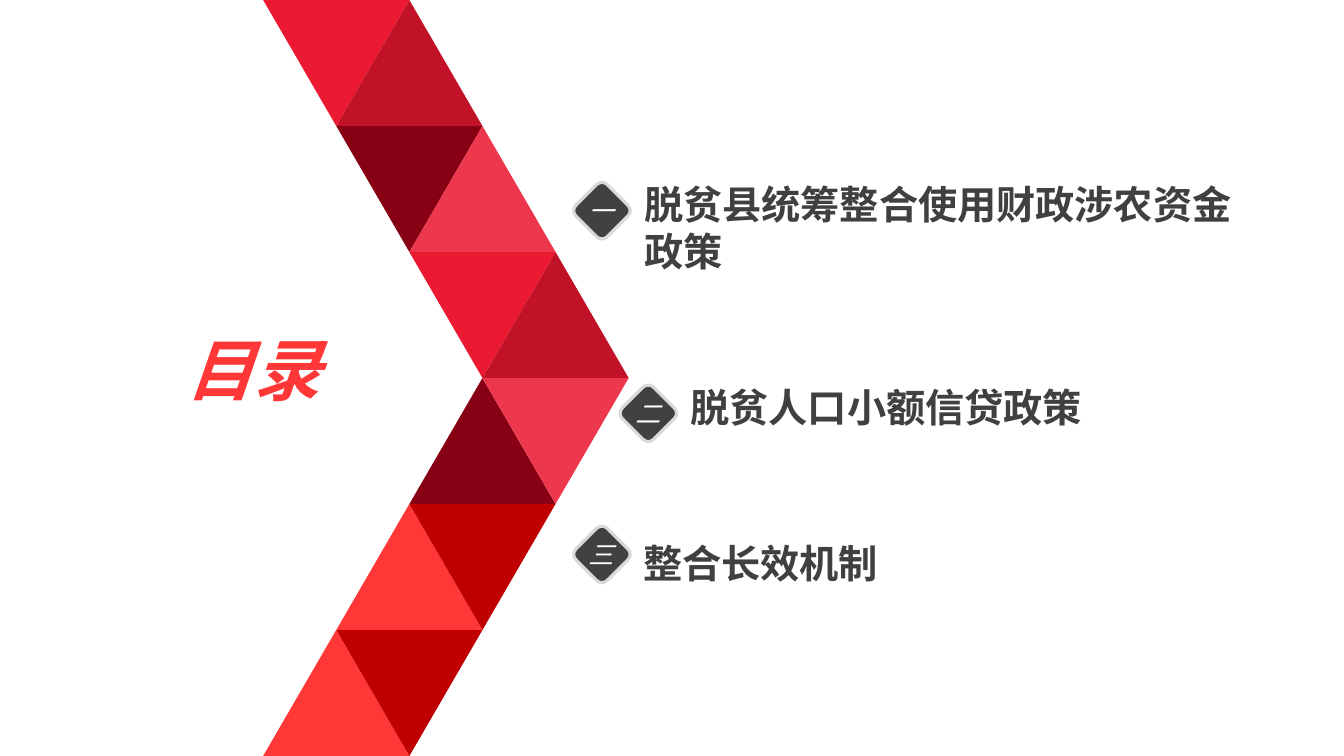
from pptx import Presentation
from pptx.dml.color import RGBColor as RGB
from pptx.enum.shapes import MSO_SHAPE as SHAPE
from pptx.enum.text import MSO_AUTO_SIZE as FIT, PP_ALIGN as ALIGN
from pptx.oxml.ns import qn
from pptx.util import Inches, Pt
from lxml.etree import SubElement

ROSE = RGB(0xED, 0x37, 0x4D)
RED = RGB(0xEB, 0x19, 0x32)
RUBY = RGB(0xC2, 0x12, 0x27)
WINE = RGB(0x88, 0x00, 0x14)
BRICK = RGB(0xC0, 0x00, 0x00)
CORAL = RGB(0xFF, 0x37, 0x37)
DARK = RGB(0x41, 0x41, 0x41)
INK = RGB(0x40, 0x40, 0x40)
GREY = RGB(0xD9, 0xD9, 0xD9)
WHITE = RGB(0xFF, 0xFF, 0xFF)


class Deck:
    head = "League Spartan"
    body = "Noto Sans CJK SC"

    def __init__(self):
        self.prs = Presentation()
        self.prs.slide_width = Inches(13.33)
        self.prs.slide_height = Inches(7.5)
        self.slide = self.prs.slides.add_slide(self.prs.slide_layouts[6])

    def shape(self, kind, x, y, w, h, fill, turn=0, line=None):
        box = self.slide.shapes.add_shape(
            kind, Inches(x), Inches(y), Inches(w), Inches(h))
        box.shadow.inherit = False
        box.rotation = turn
        box.fill.solid()
        box.fill.fore_color.rgb = fill
        if line is None:
            box.line.fill.background()
        else:
            box.line.color.rgb = line
            box.line.width = Pt(2.25)

    def text(self, x, y, w, h, words, size, font, color,
             bold=False, italic=False, wrap=True, align=ALIGN.LEFT):
        box = self.slide.shapes.add_textbox(
            Inches(x), Inches(y), Inches(w), Inches(h))
        frame = box.text_frame
        frame.word_wrap = wrap
        frame.auto_size = FIT.SHAPE_TO_FIT_TEXT
        para = frame.paragraphs[0]
        para.alignment = align
        run = para.add_run()
        run.text = words
        run.font.size = Pt(size)
        run.font.name = font
        run.font.bold = bold
        run.font.italic = italic
        run.font.color.rgb = color
        # East Asian typeface
        SubElement(run.font._element, qn("a:ea")).set("typeface", font)

    def item(self, x, y, mark, words, dx, dy, w, h):
        self.text(x + dx, y + dy, w, h, words, 28, self.body, INK, bold=True)
        self.shape(SHAPE.ROUNDED_RECTANGLE, x, y, 0.44, 0.44, DARK, 45, GREY)
        self.text(x - 0.01, y + 0.02, 0.45, 0.4, mark, 18, self.head, WHITE,
                  italic=True, wrap=False, align=ALIGN.CENTER)


def main():
    deck = Deck()

    # Arrow band: two triangles a row, stepping out and back
    wide, high = 1.45, 1.25
    rows = [(RED, RUBY), (WINE, ROSE), (RED, RUBY),
            (WINE, ROSE), (CORAL, BRICK), (CORAL, BRICK)]
    for row, pair in enumerate(rows):
        step = min(row, 5 - row)
        for col, fill in enumerate(pair):
            down = (row < 3) == (col == 0)
            deck.shape(SHAPE.ISOSCELES_TRIANGLE,
                       2.61 + (step + col) * wide / 2, row * high,
                       wide, high, fill, 180 if down else 0)

    # Title
    deck.text(1.75, 3.21, 1.94, 0.91, "目录", 48, deck.head, CORAL,
              bold=True, italic=True)

    # Contents
    deck.item(5.75, 1.87, "一", "脱贫县统筹整合使用财政涉农资金政策",
              0.54, -0.13, 6.12, 1.04)
    deck.item(6.21, 3.88, "二", "脱贫人口小额信贷政策",
              0.54, -0.13, 6.12, 0.57)
    deck.item(5.75, 5.28, "三", "整合长效机制",
              0.53, 0.02, 5.37, 0.57)

    deck.prs.save("out.pptx")


if __name__ == "__main__":
    main()
